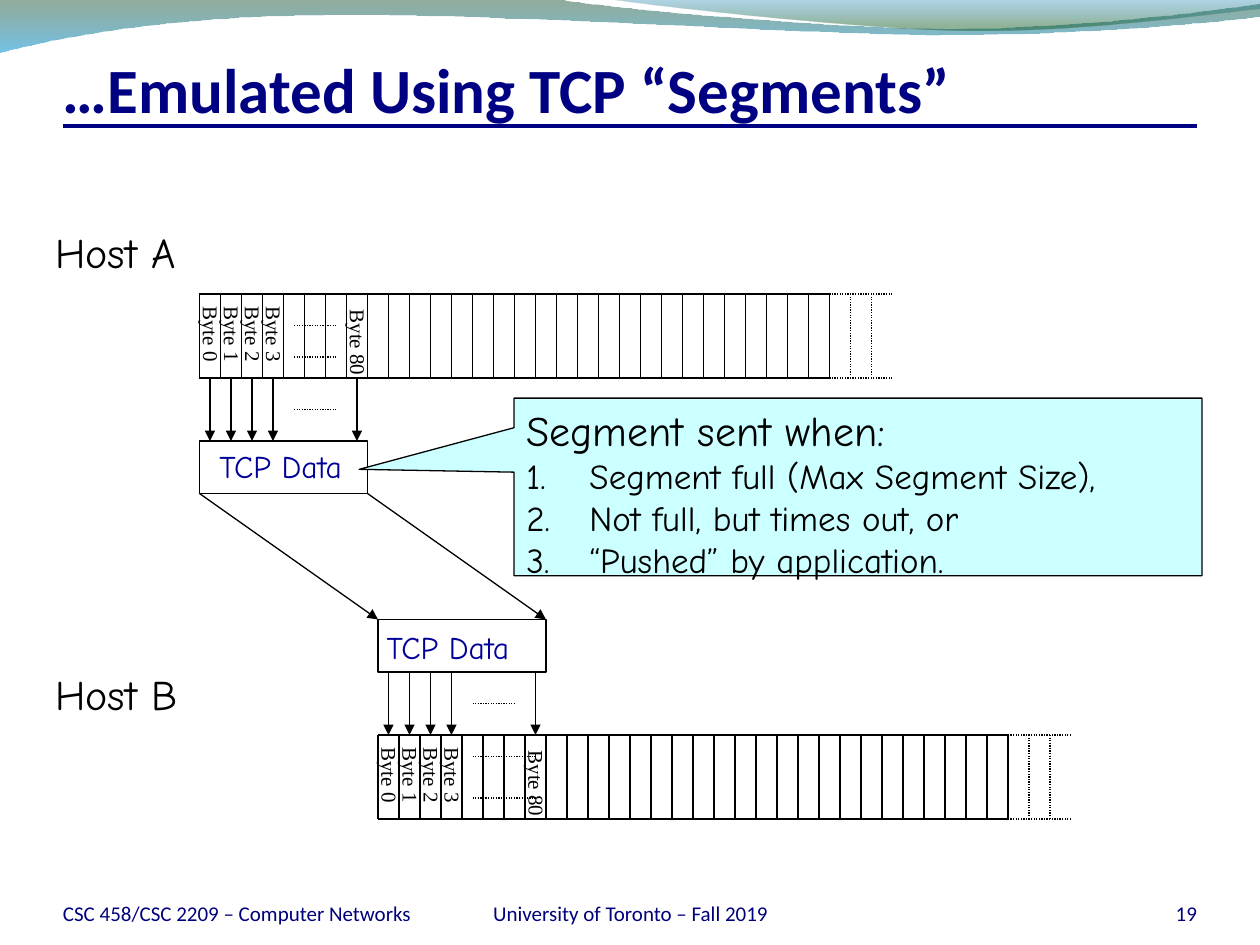
from lxml import etree
from pptx import Presentation
from pptx.dml.color import RGBColor
from pptx.enum.dml import MSO_LINE
from pptx.enum.shapes import MSO_CONNECTOR, MSO_SHAPE
from pptx.enum.text import MSO_ANCHOR as ANCHOR, PP_ALIGN as ALIGN
from pptx.oxml import parse_xml
from pptx.oxml.ns import nsdecls, qn
from pptx.util import Inches, Pt

COLORS = {
    "black": "000000", "white": "FFFFFF", "title": "000082", "footer": "00007C",
    "data": "000099", "callout": "CCFFFF", "forest": "0F461E", "sky": "0090D6",
    "ocean": "0076AF", "green": "0D5821",
}
CELL = 1 / 6
CELL_COUNT = 30
STREAM_HEIGHT = 2 / 3
ARROW_LENGTH = 0.5
DATA_WIDTH, DATA_HEIGHT = 8 * CELL, 2.5 * CELL
BYTE_CELLS = {0: "Byte 0", 1: "Byte 1", 2: "Byte 2", 3: "Byte 3", 7: "Byte 80"}


def color(name):
    return RGBColor.from_string(COLORS[name])


def set_font(paragraph, name, size, color_name, bold=False):
    font = paragraph.font
    font.name, font.size, font.bold = name, Pt(size), bold
    font.color.rgb = color(color_name)


def add_text(slide, text, box, font, size, color_name="black", bold=False,
             align=ALIGN.LEFT, anchor=ANCHOR.TOP, wrap=False, insets=None):
    shape = slide.shapes.add_textbox(*map(Inches, box))
    frame = shape.text_frame
    frame.word_wrap, frame.vertical_anchor = wrap, anchor
    if insets:
        (frame.margin_left, frame.margin_top,
         frame.margin_right, frame.margin_bottom) = map(Inches, insets)
    paragraph = frame.paragraphs[0]
    paragraph.text, paragraph.alignment = text, align
    set_font(paragraph, font, size, color_name, bold)
    return shape


def add_line(slide, x1, y1, x2, y2, color_name="black", width=0.75,
             dotted=False, arrow=False):
    line = slide.shapes.add_connector(
        MSO_CONNECTOR.STRAIGHT, *map(Inches, (x1, y1, x2, y2)))
    line.line.color.rgb = color(color_name)
    line.line.width = Pt(width)
    if dotted:
        line.line.dash_style = MSO_LINE.ROUND_DOT
    properties = line._element.spPr
    if arrow:
        etree.SubElement(properties.find(qn("a:ln")), qn("a:tailEnd"), type="triangle")
    etree.SubElement(properties, qn("a:effectLst"))


def add_box(slide, kind, box, fill):
    shape = slide.shapes.add_shape(kind, *map(Inches, box))
    shape.shadow.inherit = False
    shape.fill.solid()
    shape.fill.fore_color.rgb = color(fill)
    shape.line.color.rgb = color("black")
    shape.line.width = Pt(0.75)
    return shape


def add_wave(slide, start, segments, stops):
    """Closed outline: one-point segments are straight, three-point ones curved."""
    points = [tuple(map(Inches, point)) for segment in segments for point in segment]
    builder = slide.shapes.build_freeform(*map(Inches, start))
    builder.add_line_segments(points, close=True)
    shape = builder.convert_to_shape()
    shape.shadow.inherit = False
    shape.line.fill.background()
    shape.fill.background()
    properties = shape._element.spPr

    # Join the three points of each curve into one cubic segment
    corners = iter(list(properties.iter(qn("a:lnTo"))))
    for segment in segments:
        first, *others = [next(corners) for _ in segment]
        if others:
            first.tag = qn("a:cubicBezTo")
            for other in others:
                first.append(other[0])
                other.getparent().remove(other)

    stop_xml = "".join(
        f'<a:gs pos="{position * 1000}"><a:srgbClr val="{COLORS[name]}">'
        f'<a:alpha val="{alpha * 1000}"/></a:srgbClr></a:gs>'
        for position, name, alpha in stops)
    gradient = parse_xml(
        f'<a:gradFill {nsdecls("a")} rotWithShape="1"><a:gsLst>{stop_xml}</a:gsLst>'
        '<a:lin ang="5400000" scaled="0"/></a:gradFill>')
    properties.replace(properties.find(qn("a:noFill")), gradient)


def add_header(slide, left, top, width, height):
    add_wave(slide, (0, -0.01), [
        [(4.4, -0.01)],
        [(4.76, 0.06), (6.64, 0.23), (7.58, 0.23)],
        [(8.53, 0.23), (9.58, 0.09), (10, 0.03)],
        [(10.01, 0.13)],
        [(9.83, 0.16), (8.7, 0.28), (7.46, 0.28)],
        [(6.22, 0.27), (3.82, 0.1), (2.57, 0.12)],
        [(1.29, 0.13), (0.46, 0.3), (-0.01, 0.42)],
    ], [(0, "forest", 45), (100, "sky", 55)])
    add_wave(slide, (4.79, -0.01), [
        [(5.09, 0.04), (6.82, 0.23), (7.69, 0.24)],
        [(8.56, 0.25), (9.61, 0.11), (10, 0.07)],
        [(10, -0.01)],
    ], [(0, "ocean", 30), (80, "green", 45)])
    bottom = top + height
    add_line(slide, left, bottom, left + width, bottom, "title", 2.25)
    add_text(slide, "…Emulated Using TCP “Segments”", (left, top, width, height),
             "Calibri", 36, "title", bold=True, anchor=ANCHOR.BOTTOM, wrap=True,
             insets=(0, 0.05, 0, 0))


def add_footer(slide, left, top, width, height):
    parts = [
        ("CSC 458/CSC 2209 – Computer Networks", 0, 2.83, ALIGN.LEFT),
        ("University of Toronto – Fall 2019", 2.92, 3.17, ALIGN.CENTER),
        ("19", width - 0.83, 0.83, ALIGN.RIGHT),
    ]
    for text, offset, part_width, align in parts:
        add_text(slide, text, (left + offset, top, part_width, height), "Calibri", 12,
                 "footer", align=align, anchor=ANCHOR.BOTTOM, wrap=True,
                 insets=(0, 0, 0, 0))


def add_stream(slide, left, top, dots_width, dots_offsets):
    """Row of byte cells that fades out in dotted lines."""
    right, bottom = left + CELL_COUNT * CELL, top + STREAM_HEIGHT
    for y in (top, bottom):
        add_line(slide, left, y, right, y)
        add_line(slide, right + 3 * CELL, y, right, y, dotted=True)
    for index in range(CELL_COUNT + 3):
        x = left + index * CELL
        add_line(slide, x, top, x, bottom, dotted=index > CELL_COUNT)
    for index, label in BYTE_CELLS.items():
        width, middle = (0.73, 0.39) if index == 7 else (0.64, 0.32)
        center = left + (index + 0.5) * CELL + 0.01
        box = (center - width / 2, top + middle - 0.15, width, 0.3)
        add_text(slide, label, box, "Times New Roman", 12).rotation = 89.8
    for offset in dots_offsets:
        add_line(slide, left + 0.75, top + offset, left + 0.75 + dots_width,
                 top + offset, dotted=True)


def add_byte_arrows(slide, left, top):
    for index in BYTE_CELLS:
        x = left + (index + 0.5) * CELL
        add_line(slide, x, top, x, top + ARROW_LENGTH, arrow=True)
    add_line(slide, left + 0.75, top + 0.25, left + 1.08, top + 0.25, dotted=True)


def add_data_box(slide, left, top, text_left, text_top):
    add_box(slide, MSO_SHAPE.RECTANGLE, (left, top, DATA_WIDTH, DATA_HEIGHT), "white")
    add_text(slide, "TCP Data", (left + text_left, top + text_top, 1.28, 0.45),
             "Comic Neue", 18, "data")


def add_callout(slide, left, top, width, height):
    shape = add_box(slide, MSO_SHAPE.RECTANGULAR_CALLOUT,
                    (left, top, width, height), "callout")
    shape.adjustments[0], shape.adjustments[1] = -0.725, -0.099
    frame = shape.text_frame
    frame.word_wrap, frame.vertical_anchor = True, ANCHOR.TOP
    lines = ["Segment sent when:", "Segment full (Max Segment Size),",
             "Not full, but times out, or", "“Pushed” by application."]
    for index, text in enumerate(lines):
        paragraph = frame.add_paragraph() if index else frame.paragraphs[0]
        paragraph.text, paragraph.alignment = text, ALIGN.LEFT
        set_font(paragraph, "Comic Neue", 20 if index else 24, "black")
        properties = paragraph._p.get_or_add_pPr()
        properties.set("marL", str(Inches(0.5)))
        properties.set("indent", str(Inches(-0.5)))
        if index:
            properties.insert(0, parse_xml(
                f'<a:buAutoNum {nsdecls("a")} type="arabicPeriod"/>'))


def main():
    presentation = Presentation()
    presentation.slide_width, presentation.slide_height = Inches(10), Inches(7.5)
    slide = presentation.slides.add_slide(presentation.slide_layouts[6])
    add_header(slide, 0.5, 0.33, 9, 0.67)
    add_footer(slide, 0.5, 6.95, 9, 0.4)

    # Sending host above, receiving host below
    left_a, left_b, data_a, data_b = 9.5 * CELL, 18 * CELL, 21 * CELL, 29.5 * CELL
    for label, top in (("Host A", 1.75), ("Host B", 5.26)):
        add_text(slide, label, (0.34, top, 1.28, 0.57), "Comic Neue", 24)
    add_stream(slide, left_a, 14 * CELL, 0.33, (0.25, 0.5))
    add_stream(slide, left_b, 35 * CELL, 0.5, (0.17, 0.5))
    add_data_box(slide, left_a, data_a, 0.06, 0)
    add_data_box(slide, left_b, data_b, -0.03, 0.02)
    add_byte_arrows(slide, left_a, data_a - ARROW_LENGTH)
    add_byte_arrows(slide, left_b, data_b + DATA_HEIGHT)

    # The segment travels from A to B
    for offset in (0, DATA_WIDTH):
        add_line(slide, left_a + offset, data_a + DATA_HEIGHT,
                 left_b + offset, data_b, arrow=True)
    add_callout(slide, 4.08, 3.16, 5.46, 1.41)
    presentation.save("out.pptx")


if __name__ == "__main__":
    main()
